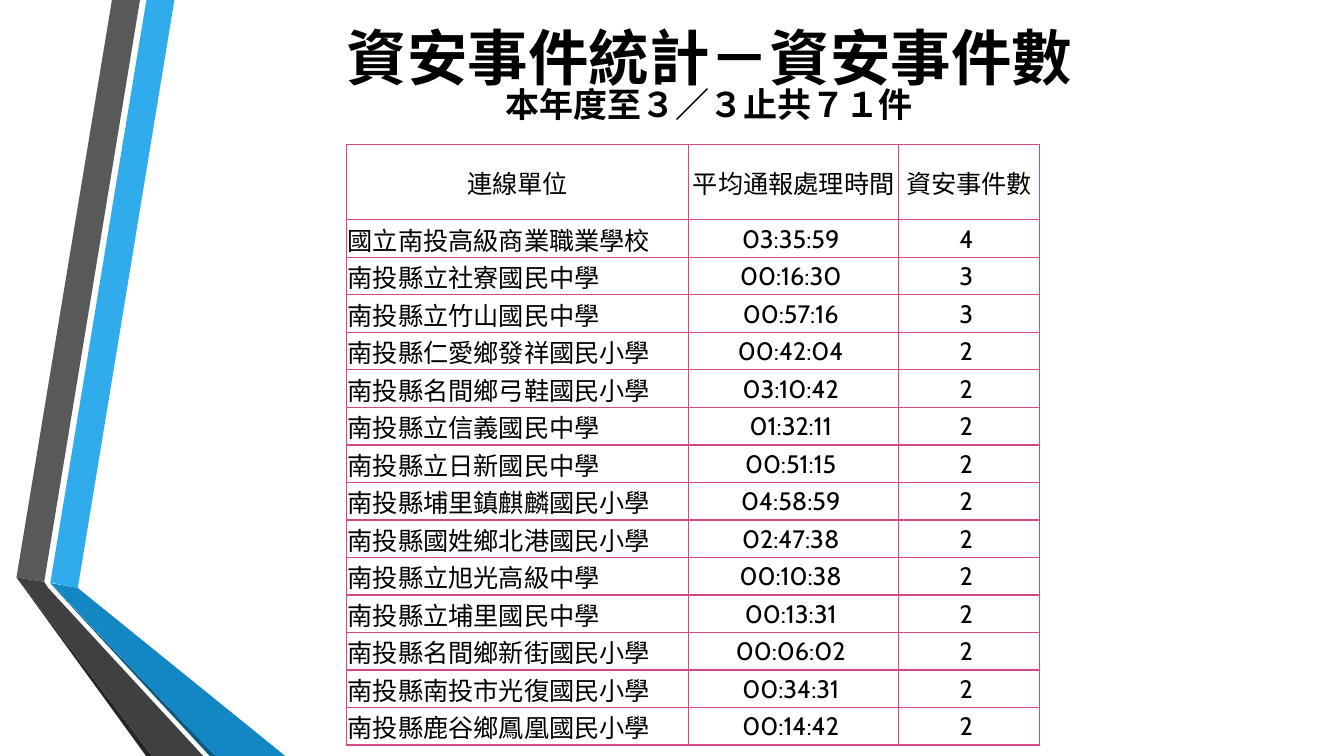
from lxml import etree
from pptx import Presentation
from pptx.dml.color import RGBColor
from pptx.enum import text
from pptx.oxml import ns
from pptx.util import Pt

COLORS = {
    "text": "000000", "border": "D64787",
    "blue": "30ACEC", "mid_blue": "1287C3", "deep_blue": "0C5A82",
    "gray": "595959", "dark_gray": "404040", "near_black": "262626",
}
CJK_FONT = "Noto Sans CJK SC"
NBSP = chr(160)


def style_run(r, size, font, bold=False):
    """Format a run, with the CJK font for its East Asian characters."""
    r.font.size, r.font.name, r.font.bold = Pt(size), font, bold
    r.font.color.rgb = RGBColor.from_string(COLORS["text"])
    ea = etree.SubElement(r.font._element, ns.qn("a:ea"))
    ea.set("typeface", CJK_FONT)


def add_borders(cell):
    """Give all four sides of a cell a 1 pt line."""
    tc_pr = cell._tc.get_or_add_tcPr()
    for i, side in enumerate(("lnL", "lnR", "lnT", "lnB")):
        ln = etree.Element(ns.qn(f"a:{side}"), w=str(Pt(1)))
        fill = etree.SubElement(ln, ns.qn("a:solidFill"))
        etree.SubElement(fill, ns.qn("a:srgbClr"), val=COLORS["border"])
        tc_pr.insert(i, ln)


prs = Presentation()
prs.slide_width, prs.slide_height = Pt(960), Pt(540)
s = prs.slides.add_slide(prs.slide_layouts[6])

# Folded ribbons on the left
ribbons = [
    ("blue", [(36, 416.2), (55.6, 420), (124.6, 0), (104.6, 0)]),
    ("gray", [(100, 0), (80, 0), (11.8, 412.4), (31.6, 415.6)]),
    ("near_black", [(11.8, 412.4), (104.4, 540), (108.7, 540)]),
    ("deep_blue", [(36, 416.9), (149.8, 540), (154, 540)]),
    ("mid_blue", [(36, 416.5), (154, 540), (203.8, 540), (55.6, 420)]),
    ("dark_gray", [(145.2, 540), (34.5, 420), (31.6, 415.6), (11.8, 412.4),
                   (108.7, 540)]),
]
for color, points in ribbons:
    corners = [(Pt(x), Pt(y)) for x, y in points]
    builder = s.shapes.build_freeform(*corners[0])
    builder.add_line_segments(corners[1:], close=True)
    sp = builder.convert_to_shape()
    sp.shadow.inherit = False
    sp.fill.solid()
    sp.fill.fore_color.rgb = RGBColor.from_string(COLORS[color])
    sp.line.fill.background()

# Title with its subtitle on a second line
title = s.shapes.add_textbox(Pt(112.3), Pt(18), Pt(789), Pt(77.8))
tf = title.text_frame
tf.word_wrap = True
tf.vertical_anchor = text.MSO_ANCHOR.MIDDLE
p = tf.paragraphs[0]
p.text = "資安事件統計－資安事件數\v本年度至３／３止共７１件"
p.alignment = text.PP_ALIGN.CENTER
p.line_spacing = 0.78
for r, size in zip(p.runs, (43.2, 24.3)):
    style_run(r, size, CJK_FONT, bold=True)

# Incident table
header = ("連線單位", "平均通報處理時間", "資安事件數")
incidents = [
    ("國立南投高級商業職業學校", "03:35:59", 4),
    ("南投縣立社寮國民中學", "00:16:30", 3),
    ("南投縣立竹山國民中學", "00:57:16", 3),
    ("南投縣仁愛鄉發祥國民小學", "00:42:04", 2),
    ("南投縣名間鄉弓鞋國民小學", "03:10:42", 2),
    ("南投縣立信義國民中學", "01:32:11", 2),
    ("南投縣立日新國民中學", "00:51:15", 2),
    ("南投縣埔里鎮麒麟國民小學", "04:58:59", 2),
    ("南投縣國姓鄉北港國民小學", "02:47:38", 2),
    ("南投縣立旭光高級中學", "00:10:38", 2),
    ("南投縣立埔里國民中學", "00:13:31", 2),
    ("南投縣名間鄉新街國民小學", "00:06:02", 2),
    ("南投縣南投市光復國民小學", "00:34:31", 2),
    ("南投縣鹿谷鄉鳳凰國民小學", "00:14:42", 2),
]
rows = [header] + [(school, time + NBSP, f"{count}{NBSP}")
                   for school, time, count in incidents]
col_widths = (244.2, 150, 100.8)
row_heights = [53.6] + [26.8] * len(incidents)
table = s.shapes.add_table(len(rows), len(header), Pt(247.7), Pt(103.5),
                           Pt(sum(col_widths)), Pt(sum(row_heights))).table
table.first_row = table.horz_banding = False
for column, width in zip(table.columns, col_widths):
    column.width = Pt(width)
for i, values in enumerate(rows):
    table.rows[i].height = Pt(row_heights[i])
    for j, value in enumerate(values):
        cell = table.cell(i, j)
        cell.fill.background()
        add_borders(cell)
        cell.margin_left = cell.margin_right = cell.margin_top = Pt(0.7)
        cell.margin_bottom = 0
        cell.vertical_anchor = text.MSO_ANCHOR.MIDDLE
        p = cell.text_frame.paragraphs[0]
        p.text = value
        is_school = i > 0 and j == 0
        p.alignment = text.PP_ALIGN.LEFT if is_school else text.PP_ALIGN.CENTER
        style_run(p.runs[0], 18, "Cabin")

prs.save("out.pptx")
